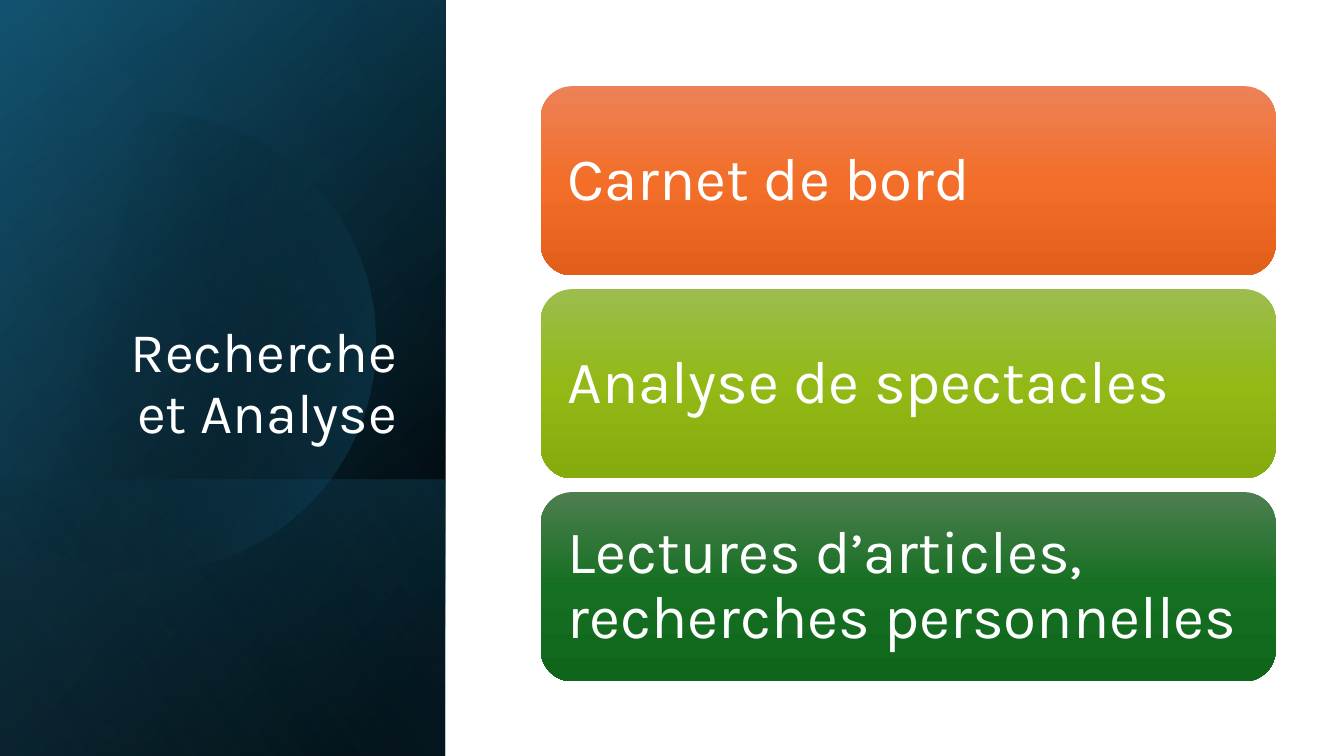
from math import acos, cos, sin

from lxml.etree import SubElement
from pptx import Presentation
from pptx.dml.color import RGBColor
from pptx.enum.shapes import MSO_SHAPE
from pptx.enum.text import MSO_ANCHOR, PP_ALIGN
from pptx.oxml.ns import qn
from pptx.util import Emu, Pt

SCALE = 9525
SLIDE_WIDTH, SLIDE_HEIGHT = 1280, 720
PANEL_WIDTH = 424

CARDS = [
    ("Carnet de bord", ("ED8257", "F26E29", "E25F1A")),
    ("Analyse de spectacles", ("9CBD4E", "92B916", "85AB0D")),
    ("Lectures d’articles, recherches personnelles", ("4D7E50", "156F21", "0F661B")),
]


def px(length):
    """Turn pixels into EMU."""
    return Emu(round(length * SCALE))


def color(hex_string):
    """Turn a hex string into a colour."""
    return RGBColor.from_string(hex_string)


def paint_gradient(shape, stops, angle):
    """Fill a shape with (position, colour, opacity) stops, without line or shadow."""
    shape.shadow.inherit = False
    shape.line.fill.background()
    shape.fill.gradient()
    gradient = shape.element.spPr.find(qn("a:gradFill"))
    for child in list(gradient):
        gradient.remove(child)
    gradient.set("rotWithShape", "1")
    stop_list = SubElement(gradient, qn("a:gsLst"))
    for position, hex_string, opacity in stops:
        stop = SubElement(stop_list, qn("a:gs"), pos=str(position * 1000))
        tint = SubElement(stop, qn("a:srgbClr"), val=str(color(hex_string)))
        if opacity < 100:
            SubElement(tint, qn("a:alpha"), val=str(opacity * 1000))
    SubElement(gradient, qn("a:lin"), ang=str(angle * 60000), scaled="0")


def write_text(shape, text, size, hex_string="FFFFFF", align=PP_ALIGN.LEFT,
               anchor=MSO_ANCHOR.MIDDLE, inset=(10, 5)):
    """Write one paragraph into a shape."""
    frame = shape.text_frame
    frame.word_wrap = True
    frame.vertical_anchor = anchor
    frame.margin_left = frame.margin_right = px(inset[0])
    frame.margin_top = frame.margin_bottom = px(inset[1])
    paragraph = frame.paragraphs[0]
    paragraph.alignment = align
    paragraph.line_spacing = 0.9
    run = paragraph.add_run()
    run.text = text
    run.font.name = "Karla"
    run.font.size = Pt(size)
    run.font.color.rgb = color(hex_string)


def add_turned_layer(slide, left, top, width, height, stops, angle):
    """Cover a box with a mirrored rectangle turned by a quarter."""
    shape = slide.shapes.add_shape(
        MSO_SHAPE.RECTANGLE,
        px(left + (width - height) / 2), px(top + (height - width) / 2),
        px(height), px(width))
    shape.rotation = 90
    shape.element.spPr.xfrm.set("flipH", "1")
    paint_gradient(shape, stops, angle)


def add_cut_disc(slide, left, center_x, center_y, radius, stops, angle):
    """Draw a disc cut off by the vertical line at left."""
    limit = acos((left - center_x) / radius)
    steps = 120
    angles = [limit * (2 * step / steps - 1) for step in range(steps + 1)]
    points = [(px(center_x + radius * cos(turn)), px(center_y + radius * sin(turn)))
              for turn in angles]
    builder = slide.shapes.build_freeform(*points[0])
    builder.add_line_segments(points[1:], close=True)
    paint_gradient(builder.convert_to_shape(), stops, angle)


def add_title_panel(slide, left, top, width, height):
    """Draw the dark side panel with its title."""
    add_turned_layer(slide, left, top, width, height,
                     [(8, "000000", 100), (100, "104862", 100)], 50)
    add_turned_layer(slide, left, top, width, height,
                     [(0, "000000", 0), (99, "156082", 46)], 30)
    band_height = 263
    add_turned_layer(slide, left, top + height - band_height, width, band_height,
                     [(2, "156082", 29), (100, "000000", 30)], 130)
    add_cut_disc(slide, left, left + 139, top + 325, 219,
                 [(29, "000000", 0), (100, "156082", 43)], 14)
    add_turned_layer(slide, left, top, width, height,
                     [(0, "000000", 0), (99, "46B1E1", 11)], 120)
    title = slide.shapes.add_textbox(px(left + 61), px(top + 177), px(327), px(252))
    write_text(title, "Recherche et Analyse", 40,
               align=PP_ALIGN.RIGHT, anchor=MSO_ANCHOR.BOTTOM)


def add_cards(slide, left, top, width, height, gap):
    """Stack the rounded cards with equal gaps in a box."""
    card_height = (height - gap * (len(CARDS) - 1)) / len(CARDS)
    for index, (text, hex_strings) in enumerate(CARDS):
        card = slide.shapes.add_shape(
            MSO_SHAPE.ROUNDED_RECTANGLE, px(left),
            px(top + index * (card_height + gap)), px(width), px(card_height))
        stops = [(position, hex_string, 100)
                 for position, hex_string in zip((0, 50, 100), hex_strings)]
        paint_gradient(card, stops, 90)
        write_text(card, text, 43, inset=(17, 17))


def main():
    """Build and save the presentation."""
    presentation = Presentation()
    presentation.slide_width = px(SLIDE_WIDTH)
    presentation.slide_height = px(SLIDE_HEIGHT)
    slide = presentation.slides.add_slide(presentation.slide_layouts[6])
    add_title_panel(slide, 0, 0, PANEL_WIDTH, SLIDE_HEIGHT)
    add_cards(slide, 515, 82, 700, 567, 13)
    presentation.save("out.pptx")


if __name__ == "__main__":
    main()
